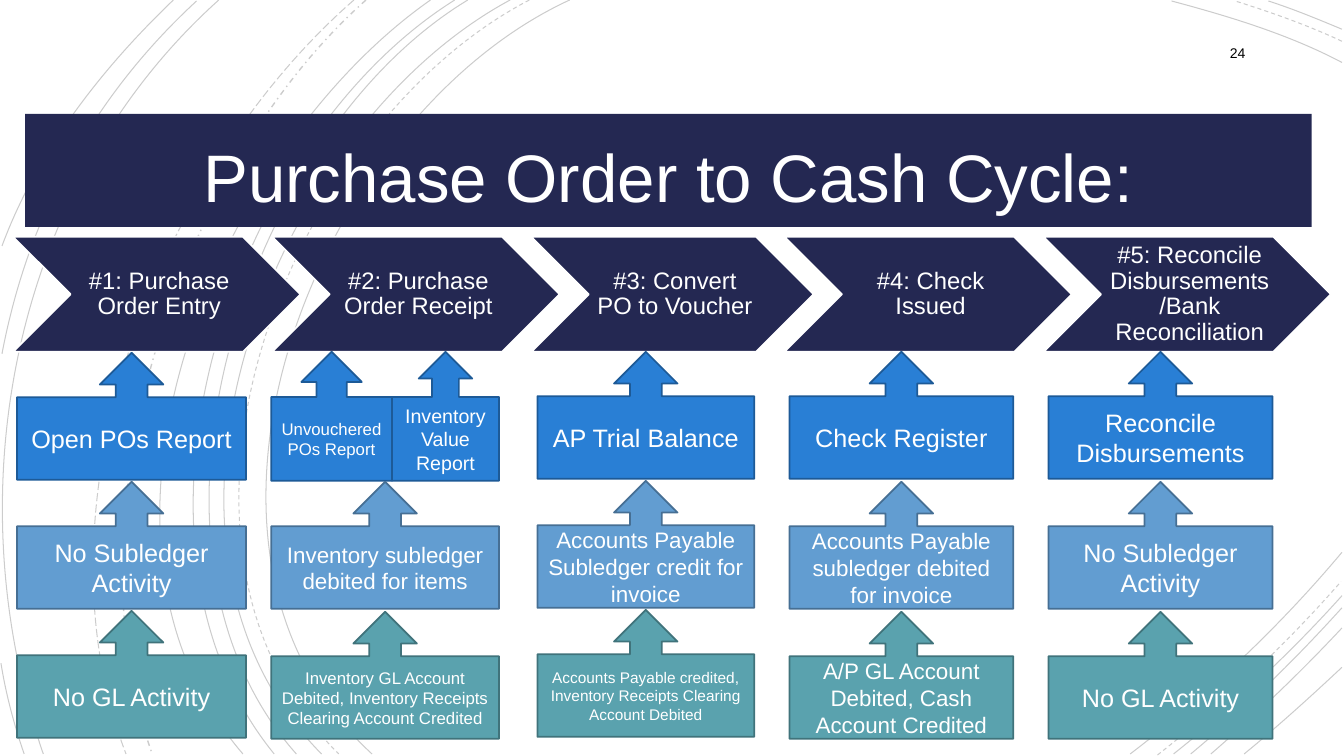
import pptx
import pptx.util
import pptx.dml.color
import pptx.enum.dml
import pptx.enum.shapes
import pptx.enum.text
from lxml import etree

SLIDE_WIDTH, SLIDE_HEIGHT = 13.33, 7.5
FONT = "Arial"
NAVY, WHITE, BLACK = "242852", "FFFFFF", "000000"
TITLE = "Purchase Order to Cash Cycle:"
PAGE_NUMBER = "24"

STEP_TOP, STEP_HEIGHT = 2.35, 1.14
CALLOUT_HEIGHT = 1.26
LEVEL_COLORS = [("297FD5", "1D5A97"), ("629DD1", "466F94"), ("5AA2AE", "40737B")]

# Each level lists its callouts as (text, size, share of the column width).
STEPS = [
    {"title": "#1: Purchase Order Entry", "chevron": (0.13, 2.85),
     "column": (0.17, 2.27), "top": 3.5, "pitch": 1.28,
     "levels": [[("Open POs Report", 18, 1)],
                [("No Subledger Activity", 18, 1)],
                [("No GL Activity", 18, 1)]]},
    {"title": "#2: Purchase Order Receipt", "chevron": (2.7, 2.85),
     "column": (2.69, 2.26), "top": 3.49, "pitch": 1.29,
     "levels": [[("Unvouchered POs Report", 12, 0.53), ("Inventory Value Report", 14, 0.47)],
                [("Inventory subledger debited for items", 16, 1)],
                [("Inventory GL Account Debited, Inventory Receipts Clearing Account Credited", 12, 1)]]},
    {"title": "#3: Convert PO to Voucher", "chevron": (5.27, 2.8),
     "column": (5.33, 2.15), "top": 3.49, "pitch": 1.28,
     "levels": [[("AP Trial Balance", 18, 1)],
                [("Accounts Payable Subledger credit for invoice", 16, 1)],
                [("Accounts Payable credited, Inventory Receipts Clearing Account Debited", 11, 1)]]},
    {"title": "#4: Check Issued", "chevron": (7.78, 2.85),
     "column": (7.83, 2.22), "top": 3.49, "pitch": 1.29,
     "levels": [[("Check Register", 18, 1)],
                [("Accounts Payable subledger debited for invoice", 16, 1)],
                [("A/P GL Account Debited, Cash Account Credited", 16, 1)]]},
    {"title": "#5: Reconcile Disbursements /Bank Reconciliation", "chevron": (10.35, 2.85),
     "column": (10.4, 2.22), "top": 3.49, "pitch": 1.29,
     "levels": [[("Reconcile Disbursements", 18, 1)],
                [("No Subledger Activity", 18, 1)],
                [("No GL Activity", 18, 1)]]},
]

# Background arcs by dash style: start, two control points, end.
ARCS = {
    "SOLID": [
        [(5.65, 0), (3.15, 1.15), (1.43, 5.4), (3.69, 7.48)],
        [(13.31, 0.62), (12.78, 0.34), (12.18, 0.16), (11.62, 0.01)],
        [(11.21, 7.48), (11.97, 6.9), (12.69, 6.22), (13.31, 5.48)],
        [(5.06, 0), (2.7, 1.27), (1.1, 5.37), (3.19, 7.48)],
        [(13.31, 0.29), (13.07, 0.19), (12.83, 0.09), (12.58, 0.01)],
        [(11.64, 7.48), (12.23, 7.01), (12.8, 6.48), (13.31, 5.91)],
        [(4.64, 0), (2.44, 1.33), (1.1, 5.41), (2.94, 7.48)],
        [(11.81, 7.48), (12.34, 7.04), (12.84, 6.55), (13.31, 6.03)],
        [(4.51, 0), (2.31, 1.38), (0.97, 5.33), (2.72, 7.48)],
        [(12.01, 7.48), (12.46, 7.09), (12.9, 6.67), (13.31, 6.23)],
        [(4.27, 0), (2.17, 1.47), (0.53, 5.29), (2.41, 7.48)],
        [(12.34, 7.48), (12.67, 7.21), (12.99, 6.92), (13.31, 6.62)],
        [(2.17, 0), (0.11, 1.85), (-0.46, 4.9), (0.43, 7.48)],
        [(1.95, 0.01), (0.92, 0.96), (0.28, 2.14), (0.02, 3.51)],
        [(0.01, 6.58), (0.06, 6.89), (0.14, 7.19), (0.24, 7.48)],
        [(1.72, 0), (1, 0.69), (0.37, 1.5), (0.02, 2.44)],
    ],
    "DASH": [
        [(5.25, 0), (2.85, 1.25), (1.23, 5.37), (3.36, 7.48)],
        [(13.31, 0.41), (12.97, 0.25), (12.6, 0.12), (12.25, 0.01)],
        [(11.48, 7.49), (12.13, 6.98), (12.75, 6.4), (13.3, 5.77)],
    ],
    "DASH_DOT": [[(3.63, 0), (1.76, 1.66), (0.65, 5.09), (1.51, 7.48)]],
    "LONG_DASH": [[(3.51, 0), (1.57, 1.69), (0.29, 4.99), (1.25, 7.48)]],
}
ARC_OPACITY = 20
DRAWING = "{http://schemas.openxmlformats.org/drawingml/2006/main}"

inches = pptx.util.Inches
Shape = pptx.enum.shapes.MSO_SHAPE
Anchor = pptx.enum.text.MSO_ANCHOR
Align = pptx.enum.text.PP_ALIGN


def color(value):
    return pptx.dml.color.RGBColor.from_string(value)


def write(shape, text, size, font_color=WHITE, align=Align.CENTER, anchor=Anchor.MIDDLE,
          line_spacing=None, insets=(0.1, 0.05, 0.1, 0.05)):
    frame = shape.text_frame
    frame.word_wrap = True
    frame.vertical_anchor = anchor
    frame.margin_left, frame.margin_top, frame.margin_right, frame.margin_bottom = map(inches, insets)
    paragraph = frame.paragraphs[0]
    paragraph.text = text
    paragraph.alignment = align
    paragraph.line_spacing = line_spacing
    paragraph.font.name = FONT
    paragraph.font.size = pptx.util.Pt(size)
    paragraph.font.color.rgb = color(font_color)


def add_box(slide, preset, left, top, width, height, fill, line=None):
    shape = slide.shapes.add_shape(preset, *map(inches, (left, top, width, height)))
    shape.shadow.inherit = False
    shape.fill.solid()
    shape.fill.fore_color.rgb = color(fill)
    if line:
        shape.line.color.rgb = color(line)
        shape.line.width = pptx.util.Pt(1.25)
    else:
        shape.line.fill.background()
    return shape


def add_arc(slide, controls, dash):
    """Add an open outline and turn its three segments into one cubic curve."""
    points = [tuple(map(inches, point)) for point in controls]
    builder = slide.shapes.build_freeform(*points[0])
    builder.add_line_segments(points[1:], close=False)
    arc = builder.convert_to_shape()
    outline = next(arc.element.iter(DRAWING + "path"))
    segments = outline.findall(DRAWING + "lnTo")
    curve = etree.SubElement(outline, DRAWING + "cubicBezTo")
    for segment in segments:
        curve.append(segment[0])
        outline.remove(segment)
    arc.shadow.inherit = False
    arc.fill.background()
    arc.line.color.rgb = color(BLACK)
    arc.line.width = pptx.util.Pt(1 if dash == "DASH_DOT" else 0.75)
    arc.line.dash_style = pptx.enum.dml.MSO_LINE[dash]
    line_color = next(arc.element.spPr.iter(DRAWING + "srgbClr"))
    etree.SubElement(line_color, DRAWING + "alpha").set("val", str(ARC_OPACITY * 1000))


def add_step(slide, step):
    """Add a chevron and the callouts stacked below it."""
    left, width = step["chevron"]
    chevron = add_box(slide, Shape.CHEVRON, left, STEP_TOP, width, STEP_HEIGHT, NAVY, WHITE)
    write(chevron, step["title"], 17, line_spacing=0.9, insets=(0.07, 0.02, 0.02, 0.02))
    column_left, column_width = step["column"]
    for level, callouts in enumerate(step["levels"]):
        top = step["top"] + level * step["pitch"]
        left = column_left
        for text, size, share in callouts:
            width = column_width * share
            height = CALLOUT_HEIGHT if share == 1 else CALLOUT_HEIGHT + 0.02
            callout = add_box(slide, Shape.UP_ARROW_CALLOUT, left, top, width, height,
                              *LEVEL_COLORS[level])
            write(callout, text, size)
            left += width


def main():
    presentation = pptx.Presentation()
    presentation.slide_width = inches(SLIDE_WIDTH)
    presentation.slide_height = inches(SLIDE_HEIGHT)
    slide = presentation.slides.add_slide(presentation.slide_layouts[6])
    for dash, arcs in ARCS.items():
        for controls in arcs:
            add_arc(slide, controls, dash)
    banner = add_box(slide, Shape.RECTANGLE, 0.25, 1.13, 12.76, 1.12, NAVY)
    write(banner, TITLE, 48, anchor=Anchor.TOP, line_spacing=1.2)
    number = slide.shapes.add_textbox(*map(inches, (11.45, 0.35, 1, 0.35)))
    write(number, PAGE_NUMBER, 10, font_color=BLACK, align=Align.RIGHT)
    for step in STEPS:
        add_step(slide, step)
    presentation.save("out.pptx")


if __name__ == "__main__":
    main()
